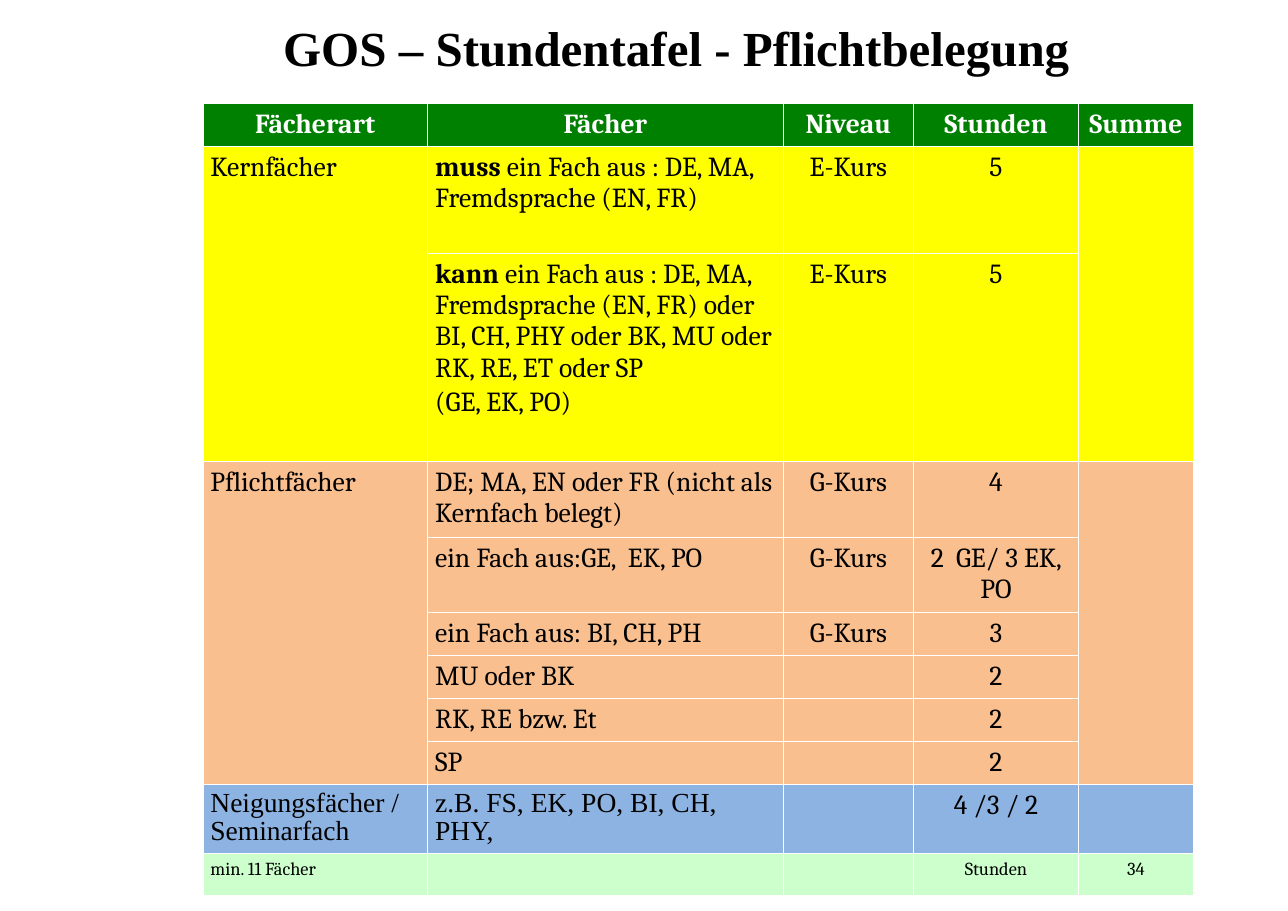
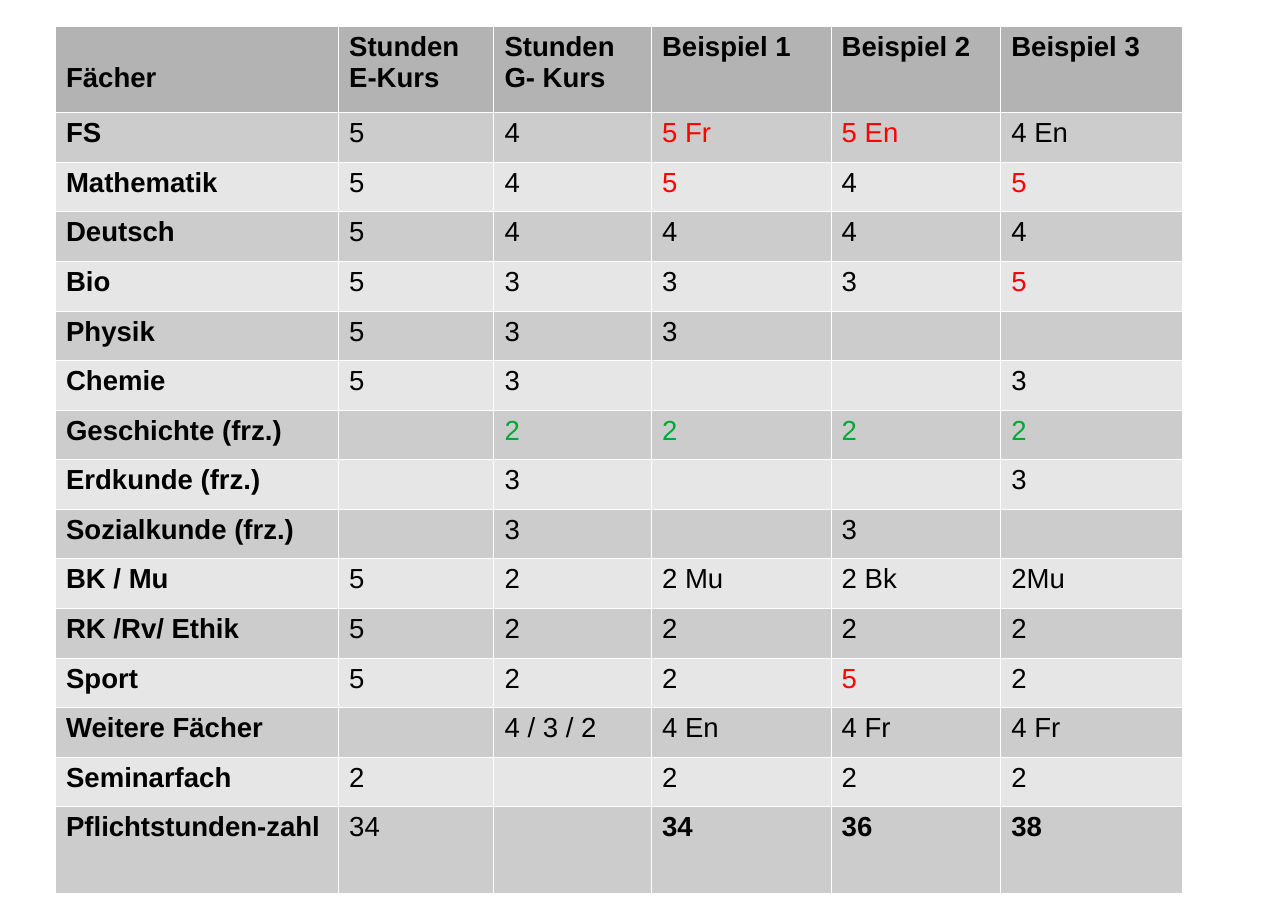
from dataclasses import dataclass, replace
from typing import Optional

from lxml import etree
from pptx import Presentation
from pptx.dml.color import RGBColor
from pptx.enum.text import PP_ALIGN
from pptx.oxml.ns import qn
from pptx.util import Inches, Pt

BLACK = RGBColor(0x00, 0x00, 0x00)
WHITE = RGBColor(0xFF, 0xFF, 0xFF)
RED = RGBColor(0xFF, 0x00, 0x00)
LEAF = RGBColor(0x00, 0xA9, 0x33)
GREEN = RGBColor(0x00, 0x80, 0x00)
YELLOW = RGBColor(0xFF, 0xFF, 0x00)
ORANGE = RGBColor(0xFA, 0xBF, 0x8F)
BLUE = RGBColor(0x8D, 0xB3, 0xE2)
MINT = RGBColor(0xCC, 0xFF, 0xCC)
HEAD_GREY = RGBColor(0xB3, 0xB3, 0xB3)
DARK_GREY = RGBColor(0xCC, 0xCC, 0xCC)
LIGHT_GREY = RGBColor(0xE6, 0xE6, 0xE6)

SLIDE_W, SLIDE_H = 11.69, 8.27
BLANK_LAYOUT = 6


@dataclass(frozen=True)
class Look:
    font: str
    size: float = 18
    color: RGBColor = BLACK
    bold: bool = False
    align: PP_ALIGN = PP_ALIGN.LEFT
    spacing: Optional[float] = None


@dataclass(frozen=True)
class Grid:
    left: float
    top: float
    cols: list[float]
    rows: list[float]
    side_margin: float
    border: float


@dataclass(frozen=True)
class Band:
    """Consecutive table rows sharing a fill; merged bands join the outer columns."""
    fill: RGBColor
    rows: list[list[str]]
    merged: bool = False


BODY = Look("Cambria", spacing=0.98)
PLAIN = Look("Arial")

HOURS_GRID = Grid(
    1.84, 0.94, [2.04, 3.23, 1.18, 1.5, 1.04],
    [0.39, 0.97, 1.89, 0.69, 0.68] + [0.39] * 4 + [0.63, 0.38], 0.07, 0.23)
# A bar ends the bold opening of a line.
HOURS_BANDS = [
    Band(GREEN, [["Fächerart", "Fächer", "Niveau", "Stunden", "Summe"]]),
    Band(YELLOW, [
        ["Kernfächer", "muss| ein Fach aus : DE, MA, Fremdsprache (EN, FR)",
         "E-Kurs", "5", ""],
        ["", "kann| ein Fach aus : DE, MA, Fremdsprache (EN, FR) oder BI, CH, PHY "
         "oder BK, MU oder RK, RE, ET oder SP\n(GE, EK, PO)", "E-Kurs", "5", ""],
    ], merged=True),
    Band(ORANGE, [
        ["Pflichtfächer", "DE; MA, EN oder FR (nicht als Kernfach belegt)",
         "G-Kurs", "4", ""],
        ["", "ein Fach aus:GE,  EK, PO", "G-Kurs", "2  GE/ 3 EK, PO", ""],
        ["", "ein Fach aus: BI, CH, PH", "G-Kurs", "3", ""],
        ["", "MU oder BK", "", "2", ""],
        ["", "RK, RE bzw. Et", "", "2", ""],
        ["", "SP", "", "2", ""],
    ], merged=True),
    Band(BLUE, [["Neigungsfächer / Seminarfach", "z.B. FS, EK, PO, BI, CH, PHY,",
                 "", "4 /3 / 2", ""]]),
    Band(MINT, [["min. 11 Fächer", "", "", "Stunden", "34"]]),
]

EXAMPLE_GRID = Grid(
    0.5, 0.24, [2.57, 1.41, 1.43, 1.63, 1.54, 1.65],
    [0.78] + [0.45] * 14 + [0.79], 0.1, 0.06)
EXAMPLES = [
    ["Fächer", "Stunden\nE-Kurs", "Stunden\nG- Kurs",
     "Beispiel 1", "Beispiel 2", "Beispiel 3"],
    ["FS", "5", "4", "5 Fr", "5 En", "4 En"],
    ["Mathematik", "5", "4", "5", "4", "5"],
    ["Deutsch", "5", "4", "4", "4", "4"],
    ["Bio", "5", "3", "3", "3", "5"],
    ["Physik", "5", "3", "3", "", ""],
    ["Chemie", "5", "3", "", "", "3"],
    ["Geschichte (frz.)", "", "2", "2", "2", "2"],
    ["Erdkunde (frz.)", "", "3", "", "", "3"],
    ["Sozialkunde (frz.)", "", "3", "", "3", ""],
    ["BK / Mu", "5", "2", "2 Mu", "2 Bk", "2Mu"],
    ["RK /Rv/ Ethik", "5", "2", "2", "2", "2"],
    ["Sport", "5", "2", "2", "5", "2"],
    ["Weitere Fächer", "", "4 / 3 / 2", "4 En", "4 Fr", "4 Fr"],
    ["Seminarfach", "2", "", "2", "2", "2"],
    ["Pflichtstunden-zahl", "34", "", "34", "36", "38"],
]
FIRST_EXAMPLE_COL = 3


def write(tf, text: str, look: Look) -> None:
    for i, line in enumerate(text.split("\n")):
        p = tf.paragraphs[0] if i == 0 else tf.add_paragraph()
        p.alignment = look.align
        if look.spacing:
            p.line_spacing = look.spacing
        lead, _, rest = line.rpartition("|")
        p.text = lead or rest
        if lead:
            p.add_run().text = rest
        for j, r in enumerate(p.runs):
            r.font.name = look.font
            r.font.size = Pt(look.size)
            r.font.bold = look.bold or (bool(lead) and j == 0)
            r.font.color.rgb = look.color
        if not line:
            # Keeps an empty cell from stretching its row.
            etree.SubElement(p._p, qn("a:endParaRPr"), sz="1200")


def add_borders(cell, width: float) -> None:
    tc_pr = cell._tc.get_or_add_tcPr()
    for i, side in enumerate(("lnL", "lnR", "lnT", "lnB")):
        ln = etree.Element(qn(f"a:{side}"), w=str(Pt(width)))
        fill = etree.SubElement(ln, qn("a:solidFill"))
        etree.SubElement(fill, qn("a:srgbClr"), val=str(WHITE))
        tc_pr.insert(i, ln)


def add_grid(s, grid: Grid):
    table = s.shapes.add_table(
        len(grid.rows), len(grid.cols), Inches(grid.left), Inches(grid.top),
        Inches(sum(grid.cols)), Inches(sum(grid.rows))).table
    table.first_row = table.horz_banding = False
    for col, width in zip(table.columns, grid.cols):
        col.width = Inches(width)
    for row, height in zip(table.rows, grid.rows):
        row.height = Inches(height)
    for cell in table.iter_cells():
        cell.margin_left = cell.margin_right = Inches(grid.side_margin)
        cell.margin_top = cell.margin_bottom = Inches(0.05)
        add_borders(cell, grid.border)
    return table


def fill_cell(cell, text: str, look: Look, fill: RGBColor) -> None:
    cell.fill.solid()
    cell.fill.fore_color.rgb = fill
    write(cell.text_frame, text, look)


def hours_look(fill: RGBColor, col: int) -> Look:
    look = replace(BODY, align=PP_ALIGN.LEFT if col < 2 else PP_ALIGN.CENTER)
    if fill == GREEN:
        return replace(look, color=WHITE, bold=True, align=PP_ALIGN.CENTER)
    if fill == BLUE and col < 2:
        return replace(look, font="Times New Roman", spacing=0.93)
    return replace(look, size=12) if fill == MINT else look


def example_look(row: int, col: int) -> Look:
    example = col >= FIRST_EXAMPLE_COL
    last = len(EXAMPLES) - 1
    bold = row == 0 or col == 0 or (row == last and example)
    color = BLACK
    if EXAMPLES[row][0].startswith("Geschichte") and col > 0:
        color = LEAF
    elif example and 0 < row < last and EXAMPLES[row][col].startswith("5"):
        color = RED
    return replace(PLAIN, bold=bold, color=color)


def build_hours(s) -> None:
    table = add_grid(s, HOURS_GRID)
    top = 0
    for band in HOURS_BANDS:
        for r, texts in enumerate(band.rows, top):
            for c, text in enumerate(texts):
                fill_cell(table.cell(r, c), text, hours_look(band.fill, c), band.fill)
        bottom = top + len(band.rows) - 1
        if band.merged:
            for c in (0, len(HOURS_GRID.cols) - 1):
                table.cell(top, c).merge(table.cell(bottom, c))
        top = bottom + 1
    table.cell(2, 1).text_frame.paragraphs[1].line_spacing = 1.12

    tf = s.shapes.add_textbox(
        Inches(2.57), Inches(0.16), Inches(7.26), Inches(0.49)).text_frame
    tf.word_wrap = True
    tf.margin_left = tf.margin_right = tf.margin_top = tf.margin_bottom = 0
    write(tf, "GOS – Stundentafel - Pflichtbelegung",
          Look("Times New Roman", size=32, bold=True))


def build_examples(s) -> None:
    table = add_grid(s, EXAMPLE_GRID)
    for r, texts in enumerate(EXAMPLES):
        fill = HEAD_GREY if r == 0 else DARK_GREY if r % 2 else LIGHT_GREY
        for c, text in enumerate(texts):
            fill_cell(table.cell(r, c), text, example_look(r, c), fill)
    # Sets the first heading level with the second line of its neighbours.
    table.cell(0, 0).margin_top = Inches(0.33)


def main() -> None:
    prs = Presentation()
    prs.slide_width, prs.slide_height = Inches(SLIDE_W), Inches(SLIDE_H)
    for build in (build_hours, build_examples):
        build(prs.slides.add_slide(prs.slide_layouts[BLANK_LAYOUT]))
    prs.save("out.pptx")


if __name__ == "__main__":
    main()
